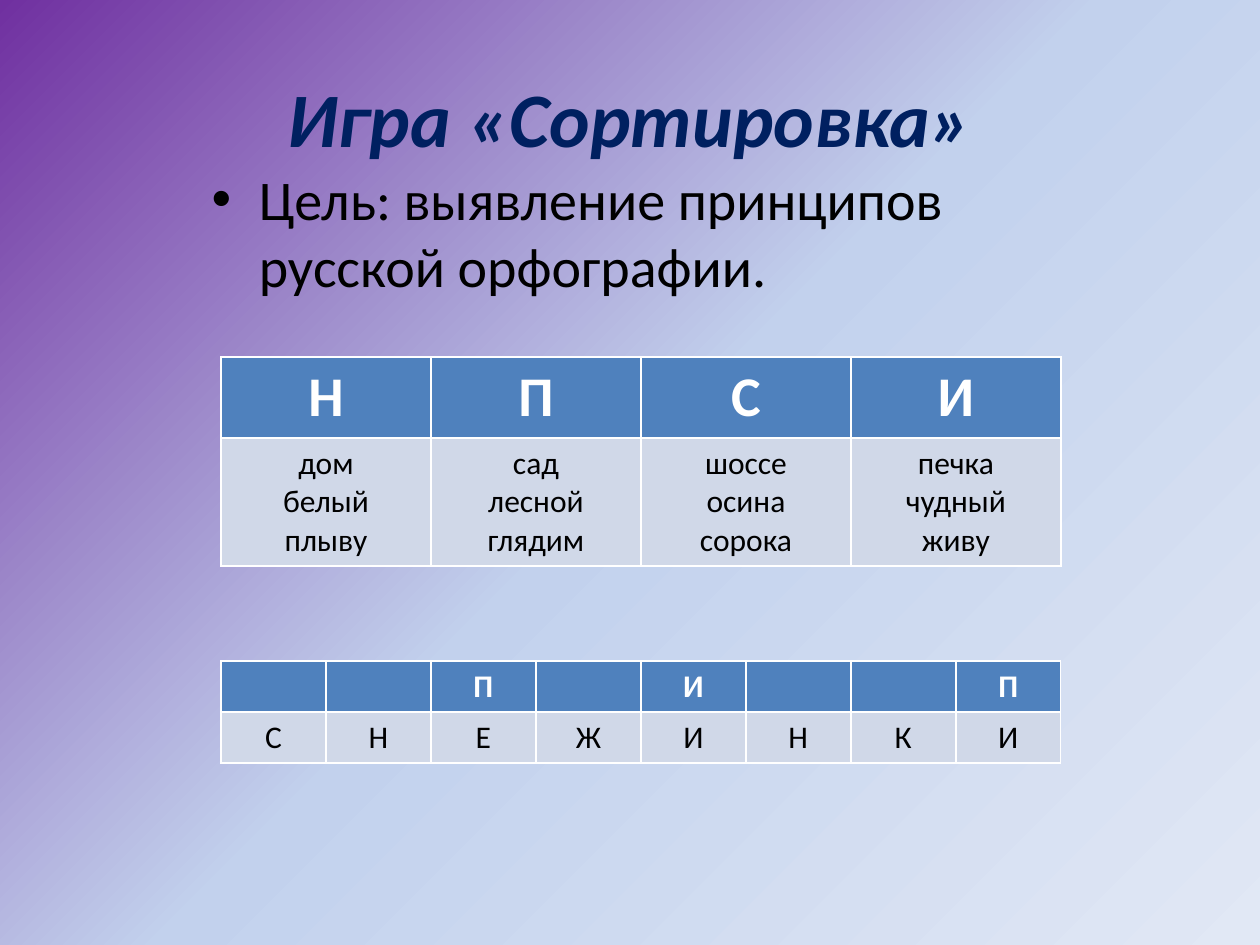
from lxml.etree import SubElement
from pptx import Presentation
from pptx.dml.color import RGBColor
from pptx.enum.text import MSO_ANCHOR as Anchor, PP_ALIGN as Align
from pptx.oxml.ns import qn
from pptx.util import Pt

EMU_PER_PX = 914400 / 126
FONT = "Calibri"
NAVY = RGBColor(0x00, 0x20, 0x60)
BLACK = RGBColor(0x00, 0x00, 0x00)
WHITE = RGBColor(0xFF, 0xFF, 0xFF)
HEADER_BLUE = RGBColor(0x4F, 0x81, 0xBD)
CELL_BLUE = RGBColor(0xD0, 0xD8, 0xE8)
PURPLE = RGBColor(0x70, 0x30, 0xA0)
LIGHT_BLUE = RGBColor(0xC2, 0xD1, 0xED)
PALE_BLUE = RGBColor(0xE1, 0xE8, 0xF5)


def px(*lengths):
    return [round(length * EMU_PER_PX) for length in lengths]


class SlideBuilder:
    def __init__(self, slide):
        self.slide = slide

    def background(self, stops):
        fill = self.slide.background.fill
        fill.gradient()
        fill.gradient_angle = 315
        stop_list = self.slide.element.find(".//" + qn("a:gsLst"))
        for old_stop in list(stop_list):
            stop_list.remove(old_stop)
        for percent, color in stops:
            stop = SubElement(stop_list, qn("a:gs"), pos=str(percent * 1000))
            SubElement(stop, qn("a:srgbClr"), val=str(color))

    def style(self, text_frame, size, color, bold=False, italic=False, align=None):
        for paragraph in text_frame.paragraphs:
            paragraph.alignment = align
            for run in paragraph.runs:
                font = run.font
                font.name, font.size = FONT, Pt(size)
                font.bold, font.italic = bold, italic
                font.color.rgb = color

    def placeholder(self, index, text, box, size, color, **styling):
        shape = self.slide.placeholders[index]
        shape.left, shape.top, shape.width, shape.height = px(*box)
        shape.text_frame.text = text
        self.style(shape.text_frame, size, color, **styling)
        return shape

    def table(self, rows, left, top, width, heights, header_size):
        frame = self.slide.shapes.add_table(
            len(rows), len(rows[0]), *px(left, top, width, sum(heights)))
        # The default table style supplies the white borders
        looks = [(HEADER_BLUE, header_size, WHITE, True), (CELL_BLUE, 18, BLACK, False)]
        for row, texts, height, look in zip(frame.table.rows, rows, heights, looks):
            row.height = px(height)[0]
            fill, size, color, bold = look
            for cell, text in zip(row.cells, texts):
                cell.fill.solid()
                cell.fill.fore_color.rgb = fill
                cell.text_frame.text = text
                self.style(cell.text_frame, size, color, bold=bold, align=Align.CENTER)


def main():
    presentation = Presentation()
    presentation.slide_width, presentation.slide_height = px(1260, 945)
    slide = presentation.slides.add_slide(presentation.slide_layouts[1])
    builder = SlideBuilder(slide)
    builder.background([(0, PURPLE), (50, LIGHT_BLUE), (100, PALE_BLUE)])

    # Title and goal
    title = builder.placeholder(0, "Игра «Сортировка»", (63, 38, 1134, 158), 44, NAVY,
                                bold=True, italic=True, align=Align.CENTER)
    title.text_frame.vertical_anchor = Anchor.MIDDLE
    builder.placeholder(1, "Цель: выявление принципов русской орфографии.",
                        (199, 158, 872, 168), 32, BLACK)

    # Words sorted by spelling principle
    words = ["дом белый плыву", "сад лесной глядим",
             "шоссе осина сорока", "печка чудный живу"]
    builder.table([list("НПСИ"), [group.replace(" ", "\n") for group in words]],
                  221, 357, 840, (80, 128), 32)

    # One word marked letter by letter
    builder.table([["", "", "П", "", "И", "", "", "П"], list("СНЕЖИНКИ")],
                  221, 661, 840, (51, 51), 18)

    presentation.save("out.pptx")


if __name__ == "__main__":
    main()
